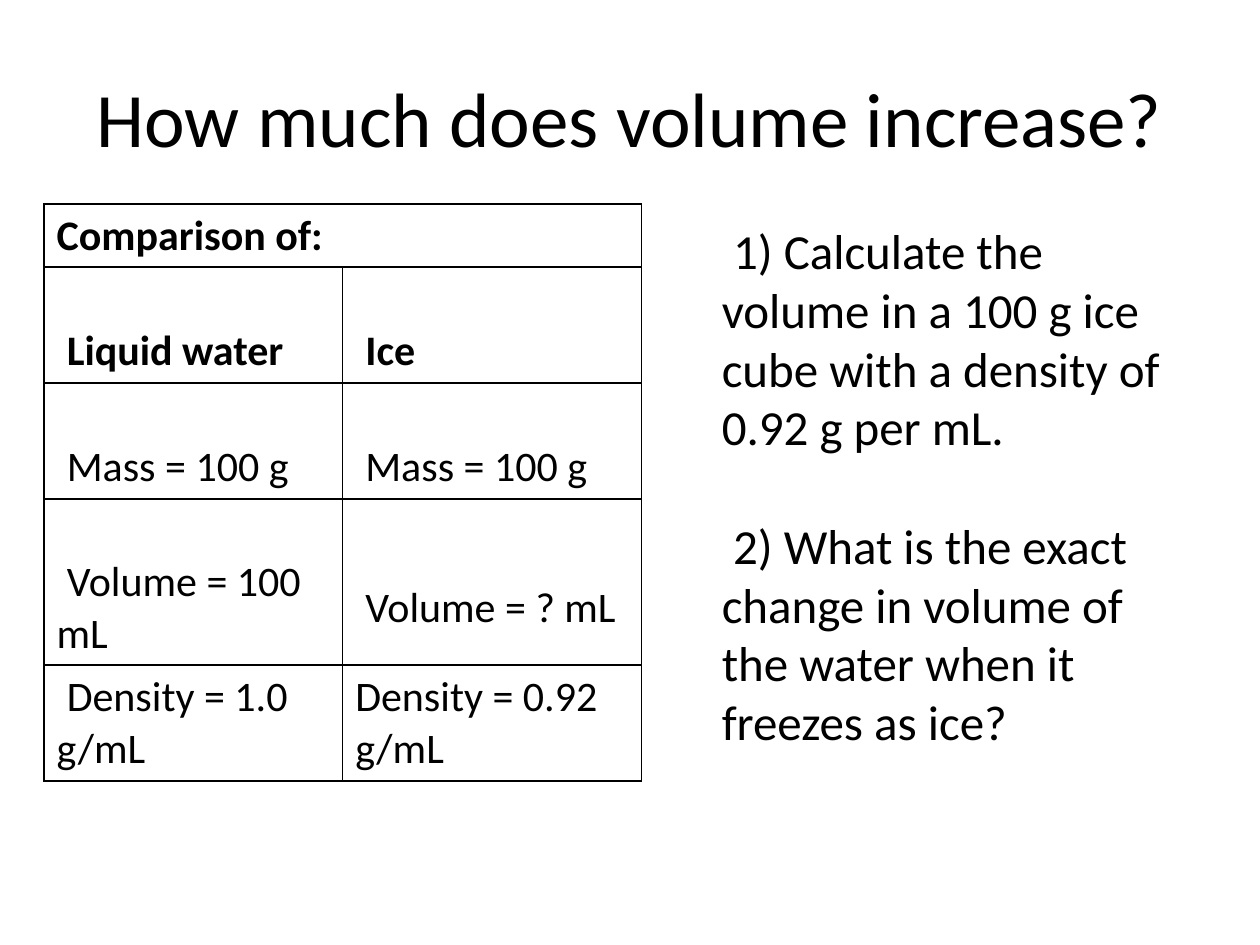
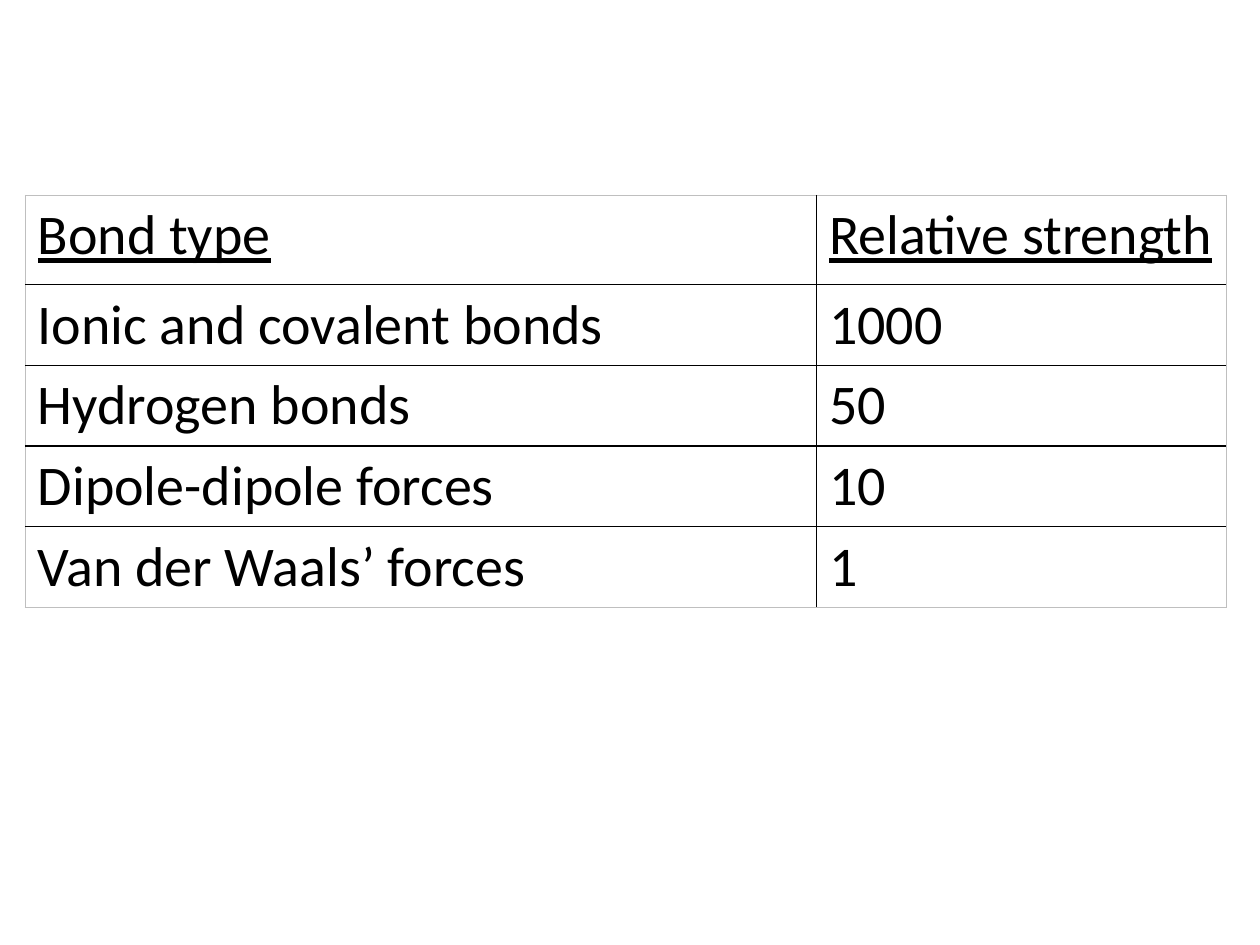
from lxml import etree
from pptx import Presentation
from pptx.dml import color
from pptx.enum import text
from pptx.oxml import ns
from pptx.util import Inches, Pt

BLACK, GREY = "000000", "BFBFBF"


def tint(code):
    """Return the colour for a hex string."""
    return color.RGBColor.from_string(code)


class Deck:
    """Hold the shared style and the current slide."""

    def __init__(self):
        """Start an empty deck."""
        self.prs = Presentation()
        self.prs.slide_width, self.prs.slide_height = Inches(10), Inches(7.5)
        self.font = "Calibri"
        self.slide = None

    def page(self):
        """Add a blank slide."""
        self.slide = self.prs.slides.add_slide(self.prs.slide_layouts[6])

    def label(self, para, words, size, indent=0, align=text.PP_ALIGN.LEFT, **form):
        """Put one styled run into a paragraph."""
        para.alignment = align
        if indent:
            props = para._p.get_or_add_pPr()
            props.set("marL", "0")
            props.set("indent", str(Inches(indent)))
        run = para.add_run()
        run.text = words
        for key, val in {"name": self.font, "size": Pt(size), **form}.items():
            setattr(run.font, key, val)
        run.font.color.rgb = tint(BLACK)

    def box(self, place, lines, size, anchor, gap=0, **form):
        """Add a wrapped text box with a gap between paragraphs."""
        frame = self.slide.shapes.add_textbox(*map(Inches, place)).text_frame
        frame.word_wrap = True
        frame.vertical_anchor = anchor
        for i, line in enumerate(lines):
            para = frame.add_paragraph() if i else frame.paragraphs[0]
            if i:
                para.space_before = Pt(gap)
            self.label(para, line, size, **form)

    def title(self, words):
        """Add the centred slide title."""
        self.box((0.5, 0.3, 9, 1.25), [words], 44, text.MSO_ANCHOR.MIDDLE,
                 align=text.PP_ALIGN.CENTER)

    def edge(self, cell, side, code, width):
        """Draw one border of a cell."""
        line = etree.SubElement(cell._tc.get_or_add_tcPr(), ns.qn(f"a:ln{side}"),
                                w=str(Pt(width)))
        fill = etree.SubElement(line, ns.qn("a:solidFill"))
        etree.SubElement(fill, ns.qn("a:srgbClr"), val=code)

    def grid(self, left, top, cols, rows, rim):
        """Add an unfilled table with black inner lines and a given rim."""
        shape = self.slide.shapes.add_table(
            len(rows), len(cols), *map(Inches, (left, top, sum(cols), sum(rows))))
        table = shape.table
        table.first_row = table.horz_banding = False
        for parts, name, sizes in ((table.columns, "width", cols),
                                   (table.rows, "height", rows)):
            for part, size in zip(parts, sizes):
                setattr(part, name, Inches(size))
        for r in range(len(rows)):
            for c in range(len(cols)):
                cell = table.cell(r, c)
                outer = {"L": c == 0, "R": c == len(cols) - 1,
                         "T": r == 0, "B": r == len(rows) - 1}
                for side, out in outer.items():
                    self.edge(cell, side, *(rim if out else (BLACK, 1)))
                cell.fill.background()
        return table

    def cell(self, table, row, col, words, size, **form):
        """Fill a table cell with text and return it."""
        cell = table.cell(row, col)
        self.label(cell.text_frame.paragraphs[0], words, size, **form)
        return cell


def volume(deck):
    """Build the slide on the volume of ice."""
    deck.page()
    deck.title("How much does volume increase?")
    table = deck.grid(0.35, 1.62, [2.37] * 2, [0.5, 0.92, 0.92, 1.32, 0.92], (BLACK, 1))
    table.cell(0, 0).merge(table.cell(0, 1))
    data = [("Comparison of:",),
            ("Liquid water", "Ice"),
            ("Mass = 100 g", "Mass = 100 g"),
            ("Volume = 100 mL", "Volume = ? mL"),
            ("Density = 1.0 g/mL", "Density = 0.92 g/mL")]
    for r, row in enumerate(data):
        for c, words in enumerate(row):
            flush = r == 0 or (r, c) == (4, 1)
            cell = deck.cell(table, r, c, words, 24, bold=r < 2,
                             indent=0 if flush else 0.08)
            cell.vertical_anchor = text.MSO_ANCHOR.MIDDLE
            if 0 < r < 4:
                cell.margin_top = Inches(0.46)
    deck.box((5.63, 1.7, 3.78, 4.34), [
        "1) Calculate the volume in a 100 g ice cube with a density of 0.92 g per mL.",
        "2) What is the exact change in volume of the water when it freezes as ice?",
    ], 28, text.MSO_ANCHOR.TOP, gap=34, indent=0.09)


def bonds(deck):
    """Build the slide on bond strength."""
    deck.page()
    table = deck.grid(0.2, 1.55, [6.28, 3.25], [0.71] + [0.64] * 4, (GREY, 0.5))
    data = [("Bond type", "Relative strength"),
            ("Ionic and covalent bonds", "1000"),
            ("Hydrogen bonds", "50"),
            ("Dipole-dipole forces", "10"),
            ("Van der Waals’ forces", "1")]
    for r, row in enumerate(data):
        for c, words in enumerate(row):
            deck.cell(table, r, c, words, 32, underline=r == 0)


def main():
    """Build and save the deck."""
    deck = Deck()
    volume(deck)
    bonds(deck)
    deck.prs.save("out.pptx")


if __name__ == "__main__":
    main()
